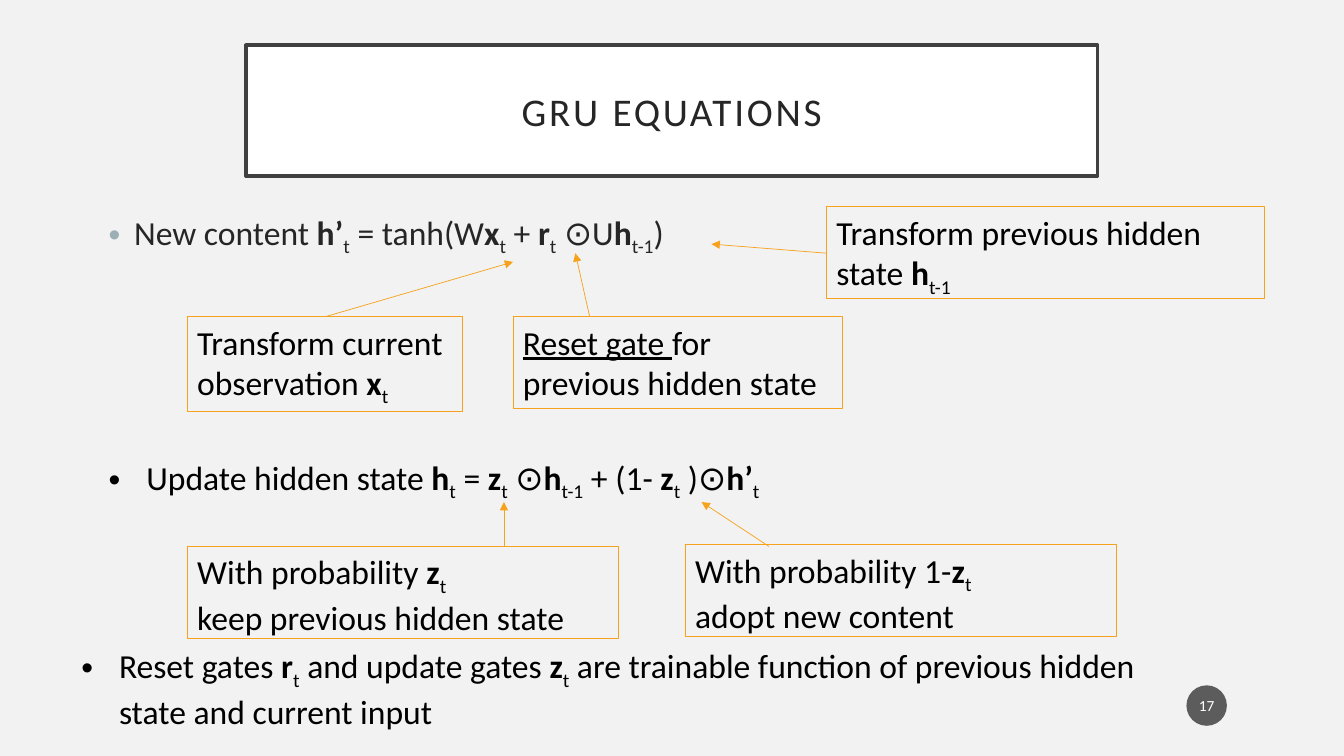
from lxml.etree import SubElement
from pptx import Presentation
from pptx.dml.color import RGBColor
from pptx.enum.shapes import MSO_CONNECTOR, MSO_SHAPE
from pptx.enum.text import MSO_ANCHOR, PP_ALIGN
from pptx.oxml.ns import qn
from pptx.util import Cm, Pt

FONT = "Calibri"
INK, BLACK, WHITE, ORANGE = "262626", "000000", "FFFFFF", "F6A21D"


def paint(color_format, color):
    """Apply a hex colour to a fill, a line fill or a font fill."""
    color_format.solid()
    color_format.fore_color.rgb = RGBColor.from_string(color)


def add_runs(paragraph, markup, size=24, color=BLACK):
    """Add runs split at |, where * is bold, _ subscript, ~ underlined and / a break."""
    for piece in markup.split("|"):
        if piece == "/":
            paragraph.add_line_break()
            continue
        style = piece[0] if piece[0] in "*_~" else ""
        run = paragraph.add_run()
        run.text = piece[len(style):]
        run.font.name = FONT
        run.font.size = Pt(size)
        paint(run.font.fill, color)
        if style == "*":
            run.font.bold = True
        elif style == "~":
            run.font.underline = True
        elif style == "_":
            run.font._element.set("baseline", "-25000")


def add_panel(slide, preset, box, fill=None, border=None, width=0.75):
    """Add a preset shape without shadow."""
    panel = slide.shapes.add_shape(preset, *map(Cm, box))
    panel.shadow.inherit = False
    if fill:
        paint(panel.fill, fill)
    else:
        panel.fill.background()
    if border:
        paint(panel.line.fill, border)
        panel.line.width = Pt(width)
    else:
        panel.line.fill.background()
    panel.text_frame.word_wrap = True
    return panel


def centre_text(panel, inset, markup, size, color):
    """Write one centred line with equal side insets."""
    frame = panel.text_frame
    frame.vertical_anchor = MSO_ANCHOR.MIDDLE
    frame.margin_left = frame.margin_right = Cm(inset)
    frame.paragraphs[0].alignment = PP_ALIGN.CENTER
    add_runs(frame.paragraphs[0], markup, size, color)


def add_title(slide, wording):
    """Add the framed slide title with spaced letters."""
    title = add_panel(slide, MSO_SHAPE.RECTANGLE, (6.2, 1.14, 21.46, 3.3), WHITE, "404040", 2.5)
    centre_text(title, 0.5, wording, 28, INK)
    title.text_frame.paragraphs[0].runs[0].font._element.set("spc", "200")


def add_page_number(slide, number):
    """Add the translucent page number disc."""
    disc = add_panel(slide, MSO_SHAPE.OVAL, (29.9, 17.27, 1.02, 1.02), "1D1D1D")
    tone = disc._element.spPr.find(qn("a:solidFill"))[0]
    SubElement(tone, qn("a:alpha"), val="70000")
    centre_text(disc, 0.05, number, 11, WHITE)


def add_bullet(slide, box, indent, markup, color=BLACK, dot_color=BLACK):
    """Add a bulleted statement with a hanging indent."""
    statement = slide.shapes.add_textbox(*map(Cm, box))
    statement.text_frame.word_wrap = True
    paragraph = statement.text_frame.paragraphs[0]
    properties = paragraph._p.get_or_add_pPr()
    properties.set("marL", str(Cm(indent)))
    properties.set("indent", str(-Cm(indent)))
    dot = SubElement(properties, qn("a:buClr"))
    SubElement(dot, qn("a:srgbClr"), val=dot_color)
    SubElement(properties, qn("a:buFont"), typeface="Arial")
    SubElement(properties, qn("a:buChar"), char="•")
    add_runs(paragraph, markup, color=color)


def add_callout(slide, box, markup, start, end):
    """Add an outlined explanation and its arrow to the term it explains."""
    callout = add_panel(slide, MSO_SHAPE.RECTANGLE, box, border=ORANGE)
    callout.text_frame.vertical_anchor = MSO_ANCHOR.TOP
    paragraph = callout.text_frame.paragraphs[0]
    paragraph.alignment = PP_ALIGN.LEFT
    add_runs(paragraph, markup)
    arrow = slide.shapes.add_connector(MSO_CONNECTOR.STRAIGHT, *map(Cm, start + end))
    paint(arrow.line.fill, ORANGE)
    arrow.line.width = Pt(0.5)
    SubElement(arrow.line._get_or_add_ln(), qn("a:tailEnd"), type="triangle")
    SubElement(arrow._element.spPr, qn("a:effectLst"))


def main():
    """Build the slide on the GRU equations."""
    deck = Presentation()
    deck.slide_width, deck.slide_height = Cm(33.87), Cm(19.05)
    slide = deck.slides.add_slide(deck.slide_layouts[6])
    paint(slide.background.fill, "F2F2F2")

    add_title(slide, "GRU EQUATIONS")
    add_bullet(slide, (2.49, 5.21, 28.42, 1.85), 0.64,
               "New content |*h’|_t| = tanh(W|*x|_t| + |*r|_t| ⊙U|*h|_t-1|)", INK, "9BAFB5")
    add_page_number(slide, "17")
    add_bullet(slide, (2.49, 11.38, 24.28, 1.27), 0.95,
               "Update hidden state |*h|_t| = |*z|_t| ⊙|*h|_t-1| + (1- |*z|_t| )⊙|*h’|_t")
    add_bullet(slide, (1.8, 16.13, 27.36, 2.31), 0.95,
               "Reset gates |*r|_t| and update gates |*z|_t"
               "| are trainable function of previous hidden state and current input")

    callouts = [
        ((4.72, 7.98, 6.93, 2.39), "Transform current observation |*x|_t",
         (8.2, 7.98), (12.93, 6.6)),
        ((20.83, 5.21, 11.05, 2.31), "Transform previous hidden state |*h|_t-1",
         (20.83, 6.38), (17.93, 6.15)),
        ((12.93, 7.98, 8.31, 2.31), "~Reset gate |for previous hidden state",
         (14.86, 7.98), (14.5, 6.38)),
        ((4.72, 13.77, 10.87, 2.31), "With probability |*z|_t|/|keep previous hidden state",
         (12.7, 13.77), (12.7, 12.65)),
        ((17.27, 13.72, 10.87, 2.31), "With probability 1-|*z|_t|/|adopt new content",
         (19.38, 13.77), (17.68, 12.65)),
    ]
    for callout in callouts:
        add_callout(slide, *callout)
    deck.save("out.pptx")


if __name__ == "__main__":
    main()
